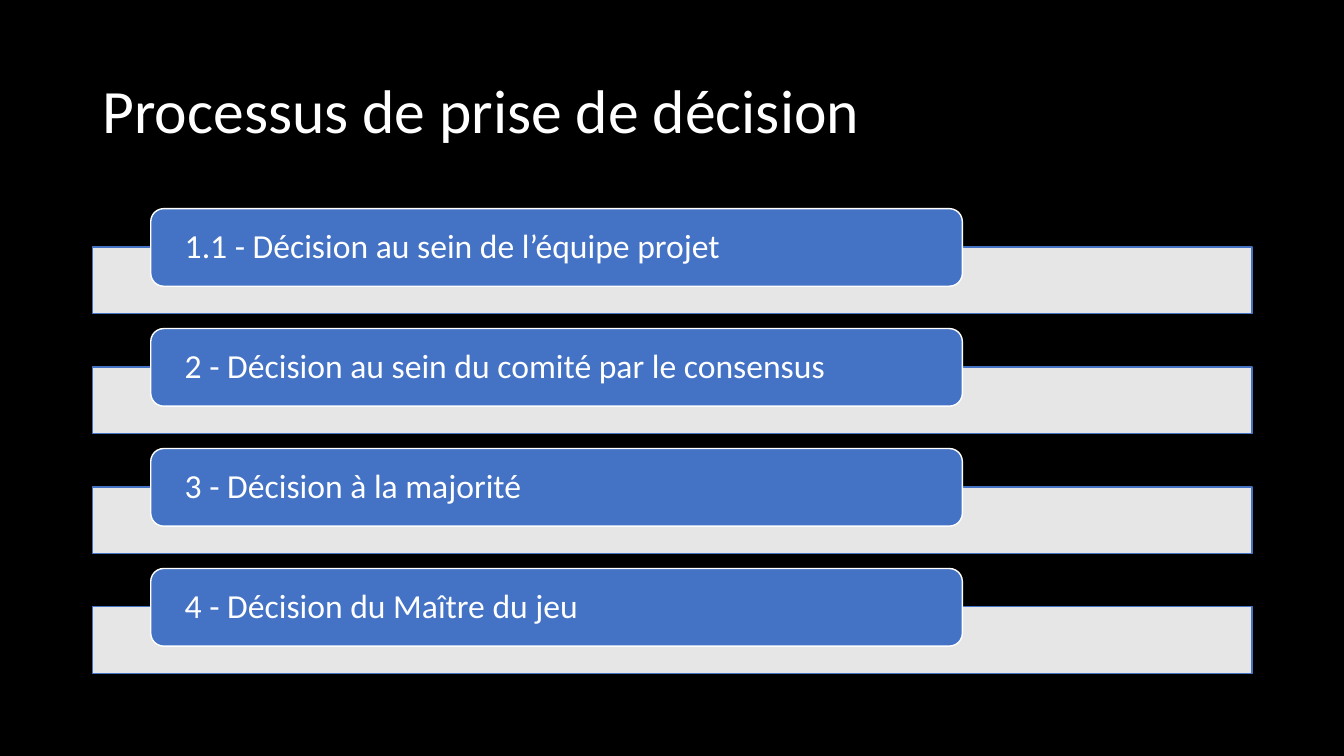
from lxml.etree import SubElement as Sub
from pptx import Presentation
from pptx.dml.color import RGBColor
from pptx.enum.shapes import MSO_SHAPE as Kind
from pptx.enum.text import MSO_ANCHOR as Anchor, PP_ALIGN as Align
from pptx.oxml.ns import qn
from pptx.util import Inches, Pt

WHITE, BLUE, BLACK = "FFFFFF", "4472C4", "000000"
STEPS = [
    "1 - Décision au sein de l’équipe projet",
    "2 - Décision au sein du comité par le consensus",
    "3 - Décision à la majorité",
    "4 - Décision du Maître du jeu",
]


def paint(color, tone):
    """Set a colour format from a hex string."""
    color.rgb = RGBColor.from_string(tone)


def write(shape, text, size=24, tone=WHITE, side=0.3, edge=0, number=False):
    """Put one left-aligned, vertically centred line of text in a shape."""
    frame = shape.text_frame
    frame.word_wrap = True
    frame.vertical_anchor = Anchor.MIDDLE
    frame.margin_left = frame.margin_right = Inches(side)
    frame.margin_top = frame.margin_bottom = Inches(edge)
    para = frame.paragraphs[0]
    para.alignment = Align.LEFT
    para.line_spacing = 0.9
    run = para.add_run()
    run.text = text
    run.font.size = Pt(size)
    run.font.name = "Calibri"
    paint(run.font.color, tone)
    if number:
        Sub(para._p.get_or_add_pPr(), qn("a:buAutoNum"), type="arabicPeriod")


def block(slide, kind, box, fill, line, alpha=100):
    """Add a filled, outlined shape whose opacity is given in percent."""
    shape = slide.shapes.add_shape(kind, *map(Inches, box))
    shape.shadow.inherit = False
    shape.fill.solid()
    paint(shape.fill.fore_color, fill)
    paint(shape.line.color, line)
    shape.line.width = Pt(1)
    if alpha < 100:
        color = shape._element.spPr.find(qn("a:solidFill"))[0]
        Sub(color, qn("a:alpha"), val=str(alpha * 1000))
    return shape


def title(slide, box, text):
    """Write the slide title in its box."""
    area = slide.shapes.add_textbox(*map(Inches, box))
    write(area, text, size=44, side=0.1, edge=0.05)


def steps(slide, box, items, bar=0.66, pill=0.77, drop=0.38):
    """Stack one bar with an overlapping pill per item, evenly in the box."""
    left, top, width, height = box
    pitch = (height - drop - bar) / (len(items) - 1)
    for row, text in enumerate(items):
        y = top + row * pitch
        block(slide, Kind.RECTANGLE, (left, y + drop, width, bar), WHITE, BLUE, 90)
        label = block(slide, Kind.ROUNDED_RECTANGLE,
                      (left + width * 0.05, y, width * 0.7, pill), BLUE, WHITE)
        write(label, text, number=row == 0)


def main():
    """Build the slide and save it."""
    deck = Presentation()
    deck.slide_width, deck.slide_height = Inches(13.33), Inches(7.5)
    slide = deck.slides.add_slide(deck.slide_layouts[6])
    slide.background.fill.solid()
    paint(slide.background.fill.fore_color, BLACK)
    title(slide, (0.92, 0.4, 11.5, 1.45), "Processus de prise de décision")
    steps(slide, (0.92, 2.07, 11.5, 4.61), STEPS)
    deck.save("out.pptx")


if __name__ == "__main__":
    main()
